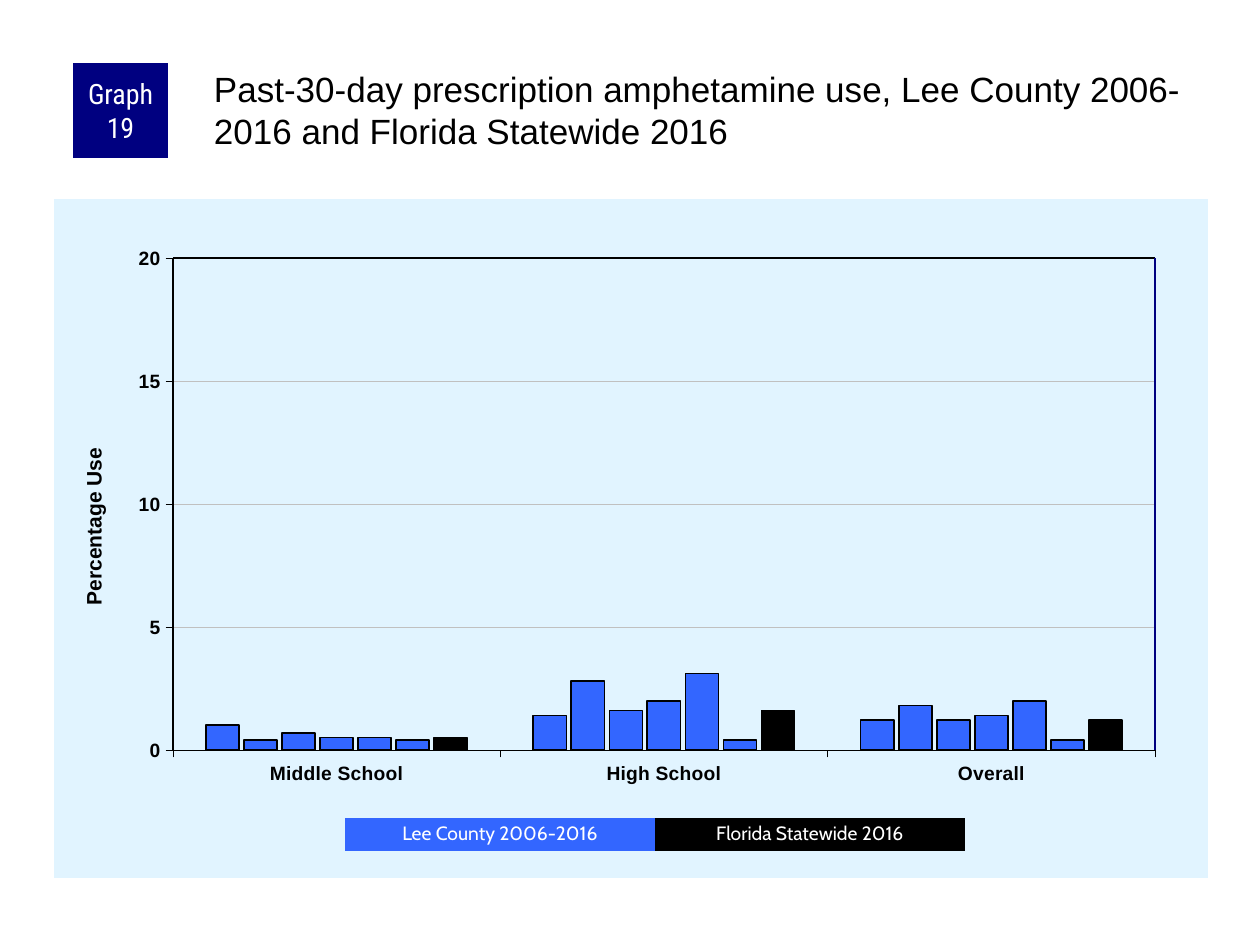
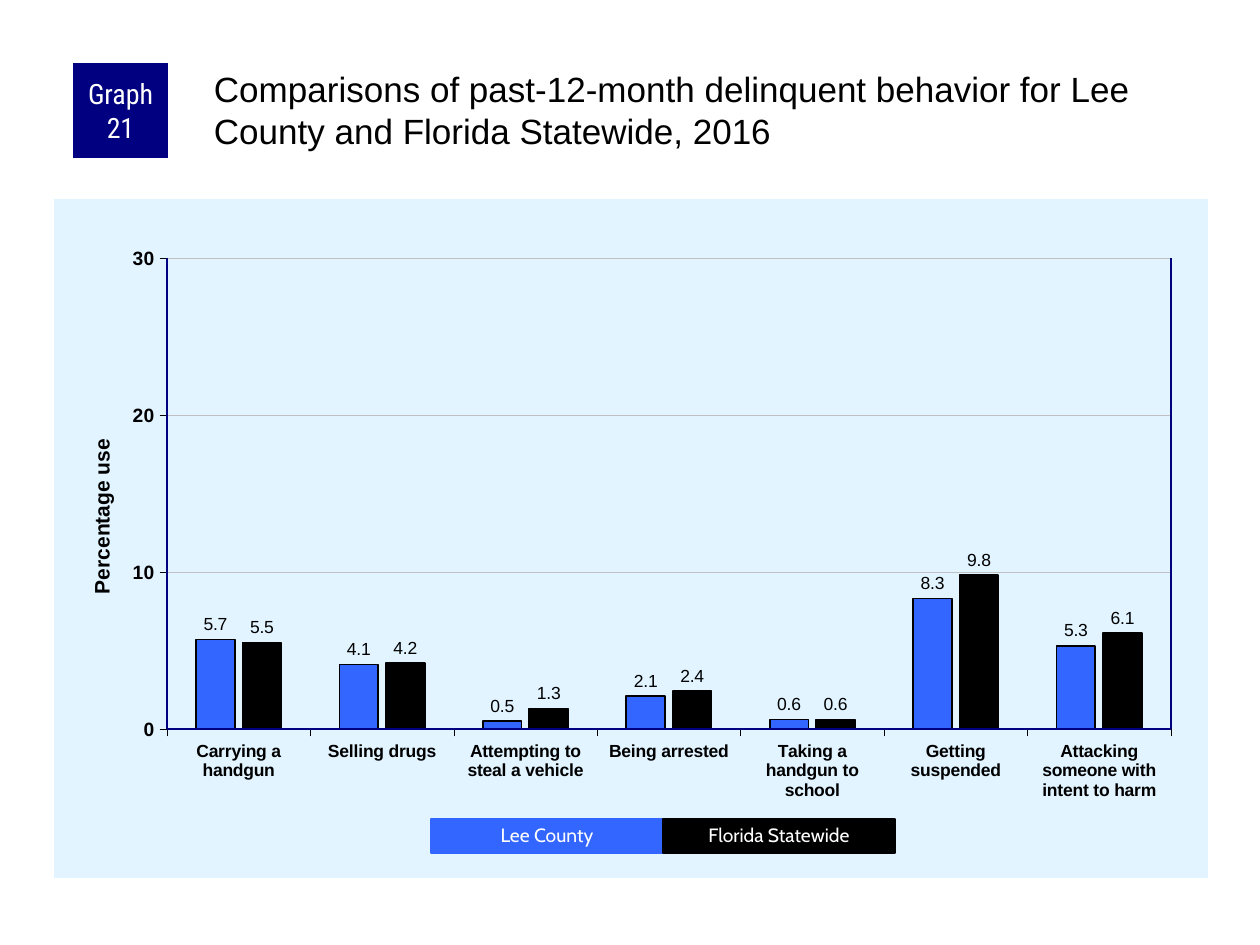
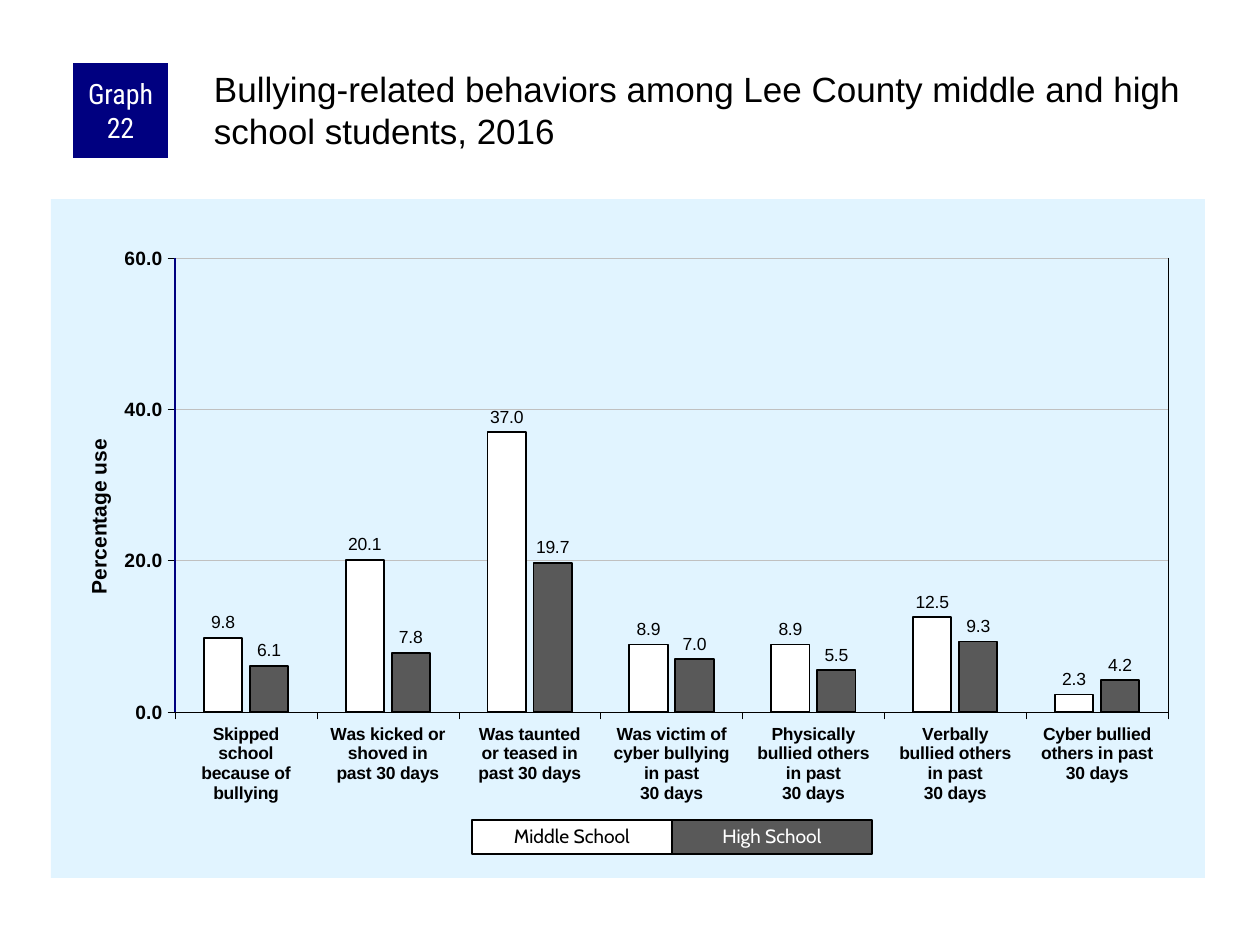
from pptx import Presentation
from pptx.chart.data import CategoryChartData
from pptx.dml.color import RGBColor
from pptx.enum.chart import XL_CHART_TYPE, XL_LABEL_POSITION, XL_TICK_MARK
from pptx.enum.shapes import MSO_CONNECTOR, MSO_SHAPE
from pptx.enum.text import MSO_ANCHOR, PP_ALIGN
from pptx.oxml import parse_xml
from pptx.oxml.ns import nsdecls, qn
from pptx.util import Emu, Pt

COLUMN = XL_CHART_TYPE.COLUMN_CLUSTERED
ABOVE = XL_LABEL_POSITION.OUTSIDE_END
TICK_OUT, TICK_NONE = XL_TICK_MARK.OUTSIDE, XL_TICK_MARK.NONE
STRAIGHT, RECT = MSO_CONNECTOR.STRAIGHT, MSO_SHAPE.RECTANGLE
TOP, MIDDLE = MSO_ANCHOR.TOP, MSO_ANCHOR.MIDDLE
LEFT, CENTER = PP_ALIGN.LEFT, PP_ALIGN.CENTER

HEX = {"black": "000000", "white": "FFFFFF", "navy": "000080", "blue": "3366FF",
       "gray": "595959", "panel": "E1F4FF", "grid": "C0C0C0"}

# Content: boxes are left, top, width, height in px
SLIDES = [
    {"badge": "Graph 19",
     "title": "Past-30-day prescription amphetamine use, Lee County 2006-2016 "
              "and Florida Statewide 2016",
     "axis": "Percentage Use", "axis_at": (77, 444),
     "panel": (54, 199, 1154, 679), "plot": (173, 258, 982, 492),
     "max": 20, "step": 5, "format": "General", "gap": 200, "overlap": -15,
     "cat_size": 11, "labels": False,
     "cats": ["Middle School", "High School", "Overall"],
     "series": [("blue", (1, 1.4, 1.2)), ("blue", (0.4, 2.8, 1.8)),
                ("blue", (0.7, 1.6, 1.2)), ("blue", (0.5, 2, 1.4)),
                ("blue", (0.5, 3.1, 2)), ("blue", (0.4, 0.4, 0.4)),
                ("black", (0.5, 1.6, 1.2))],
     "edges": [("left", "black", 1), ("top", "black", 0.75), ("right", "navy", 1)],
     "key_at": (345, 818, 310, 33),
     "keys": [("Lee County 2006-2016", "blue", "white", None),
              ("Florida Statewide 2016", "black", "white", None)]},
    {"badge": "Graph 21",
     "title": "Comparisons of past-12-month delinquent behavior for Lee County "
              "and Florida Statewide, 2016",
     "axis": "Percentage use", "axis_at": (85, 435),
     "panel": (54, 199, 1154, 679), "plot": (167, 258, 1004, 471),
     "max": 30, "step": 10, "format": "General", "gap": 150, "overlap": -20,
     "cat_size": 10, "labels": True,
     "cats": ["Carrying a handgun", "Selling drugs", "Attempting to steal a vehicle",
              "Being arrested", "Taking a handgun to school", "Getting suspended",
              "Attacking someone with intent to harm"],
     "series": [("blue", (5.7, 4.1, 0.5, 2.1, 0.6, 8.3, 5.3)),
                ("black", (5.5, 4.2, 1.3, 2.4, 0.6, 9.8, 6.1))],
     "edges": [("left", "navy", 1), ("bottom", "navy", 1), ("right", "navy", 1)],
     "key_at": (431, 819, 232, 34),
     "keys": [("Lee County", "blue", "white", "blue"),
              ("Florida Statewide", "black", "white", "black")]},
    {"badge": "Graph 22",
     "title": "Bullying-related behaviors among Lee County middle and high school "
              "students, 2016",
     "axis": "Percentage use", "axis_at": (82, 435),
     "panel": (51, 199, 1154, 679), "plot": (175, 258, 993, 454),
     "max": 60, "step": 20, "format": "0.0", "gap": 150, "overlap": -20,
     "cat_size": 10, "labels": True,
     "cats": ["Skipped\nschool\nbecause of\nbullying",
              "Was kicked or\nshoved in\npast 30 days",
              "Was taunted\nor teased in\npast 30 days",
              "Was victim of\ncyber bullying\nin past\n30 days",
              "Physically\nbullied others\nin past\n30 days",
              "Verbally\nbullied others\nin past\n30 days",
              "Cyber bullied\nothers in past\n30 days"],
     "series": [("white", (9.8, 20.1, 37, 8.9, 8.9, 12.5, 2.3)),
                ("gray", (6.1, 7.8, 19.7, 7, 5.5, 9.3, 4.2))],
     "edges": [("left", "navy", 1), ("right", "black", 0.25)],
     "key_at": (472, 820, 200, 34),
     "keys": [("Middle School", "white", "black", "black"),
              ("High School", "gray", "white", "black")]},
]

# Shared places
BADGE = (73, 63, 95, 95)
TITLE = (210, 63, 998, 105)


def px(n):
    return Emu(round(n * 914400 / 126))


def rgb(name):
    return RGBColor.from_string(HEX[name])


def ink(line, color, width):
    line.color.rgb = rgb(color)
    line.width = Pt(width)


def style(font, size, color="black", face="Arial", bold=False):
    font.size, font.name, font.bold = Pt(size), face, bold
    font.color.rgb = rgb(color)


def write(slide, text, box, size=11, face="Cabin", color="white", fill=None,
          line=None, align=CENTER, anchor=MIDDLE, pads=(13, 6, 13, 6), space=None):
    at = [px(n) for n in box]
    if fill:
        shape = slide.shapes.add_shape(RECT, *at)
        shape.shadow.inherit = False
        shape.fill.solid()
        shape.fill.fore_color.rgb = rgb(fill)
        if line:
            ink(shape.line, line, 0.75)
        else:
            shape.line.fill.background()
    else:
        shape = slide.shapes.add_textbox(*at)
    frame = shape.text_frame
    frame.word_wrap, frame.vertical_anchor = True, anchor
    (frame.margin_left, frame.margin_top,
     frame.margin_right, frame.margin_bottom) = [px(n) for n in pads]
    para = frame.paragraphs[0]
    para.alignment = align
    if space:
        para.line_spacing = space
    run = para.add_run()
    run.text = text
    style(run.font, size, color, face)


def place(node, index, panel, box, target=""):
    """Fix a chart part at a px box within the panel."""
    for old in node.findall(qn("c:layout")):
        node.remove(old)
    left, top, wide, high = panel
    parts = zip("xywh", box, (left, top, 0, 0), (wide, high, wide, high))
    tags = "".join(f'<c:{tag} val="{(n - base) / full:.4f}"/>'
                   for tag, n, base, full in parts)
    node.insert(index, parse_xml(
        f'<c:layout {nsdecls("c")}><c:manualLayout>{target}'
        f'<c:xMode val="edge"/><c:yMode val="edge"/>{tags}'
        '</c:manualLayout></c:layout>'))


def draw_chart(slide, item):
    data = CategoryChartData()
    data.categories = item["cats"]
    for i, (_, vals) in enumerate(item["series"], 1):
        data.add_series(f"Series {i}", vals)
    panel = item["panel"]
    chart = slide.shapes.add_chart(COLUMN, *[px(n) for n in panel], data).chart
    chart.has_legend = chart.has_title = False
    style(chart.font, 11.5)

    # Panel fill and plot place
    root = chart.element
    root.find(qn("c:chart")).addnext(parse_xml(
        f'<c:spPr {nsdecls("c", "a")}><a:solidFill><a:srgbClr val="{HEX["panel"]}"/>'
        '</a:solidFill><a:ln><a:noFill/></a:ln></c:spPr>'))
    place(root.find(".//" + qn("c:plotArea")), 0, panel, item["plot"],
          '<c:layoutTarget val="inner"/>')

    # Axes
    cat, val = chart.category_axis, chart.value_axis
    for axis, size in ((cat, item["cat_size"]), (val, 11)):
        style(axis.tick_labels.font, size, bold=True)
        axis.major_tick_mark, axis.minor_tick_mark = TICK_OUT, TICK_NONE
        ink(axis.format.line, "black", 0.25)
    val.minimum_scale, val.maximum_scale = 0, item["max"]
    val.major_unit = item["step"]
    val.tick_labels.number_format = item["format"]
    val.tick_labels.number_format_is_linked = False
    ink(val.major_gridlines.format.line, "grid", 0.25)
    name = val.axis_title
    run = name.text_frame.paragraphs[0].add_run()
    run.text = item["axis"]
    style(run.font, 12, bold=True)
    body = name.element.find(".//" + qn("a:bodyPr"))
    body.set("rot", "-5400000")
    body.set("vert", "horz")
    place(name.element, 1, panel, item["axis_at"])

    # Columns
    plot = chart.plots[0]
    plot.gap_width, plot.overlap = item["gap"], item["overlap"]
    plot.vary_by_categories = False
    for bars, (color, _) in zip(plot.series, item["series"]):
        bars.invert_if_negative = False
        bars.format.fill.solid()
        bars.format.fill.fore_color.rgb = rgb(color)
        ink(bars.format.line, "black", 1)
        if item["labels"]:
            labels = bars.data_labels
            labels.show_value, labels.position = True, ABOVE
            labels.number_format, labels.number_format_is_linked = "0.0", False
            style(labels.font, 10)


def draw_edges(slide, item):
    x, y, w, h = item["plot"]
    ends = {"left": (x, y, x, y + h), "right": (x + w, y, x + w, y + h),
            "top": (x, y, x + w, y), "bottom": (x, y + h, x + w, y + h)}
    for side, color, width in item["edges"]:
        edge = slide.shapes.add_connector(STRAIGHT, *[px(n) for n in ends[side]])
        ink(edge.line, color, width)
        edge.element.spPr.append(parse_xml(f'<a:effectLst {nsdecls("a")}/>'))


def main():
    deck = Presentation()
    deck.slide_width, deck.slide_height = px(1260), px(945)
    for item in SLIDES:
        slide = deck.slides.add_slide(deck.slide_layouts[6])
        draw_chart(slide, item)
        draw_edges(slide, item)
        write(slide, item["badge"], BADGE, size=16, face="Roboto Condensed",
              fill="navy", pads=(6, 0, 6, 0))
        write(slide, item["title"], TITLE, size=20, face="Arial", color="black",
              align=LEFT, anchor=TOP, pads=(4, 4, 0, 0))
        left, top, wide, high = item["key_at"]
        for i, (text, fill, color, line) in enumerate(item["keys"]):
            write(slide, text, (left + i * wide, top, wide, high), color=color,
                  fill=fill, line=line, space=0.9)
    deck.save("out.pptx")


if __name__ == "__main__":
    main()
